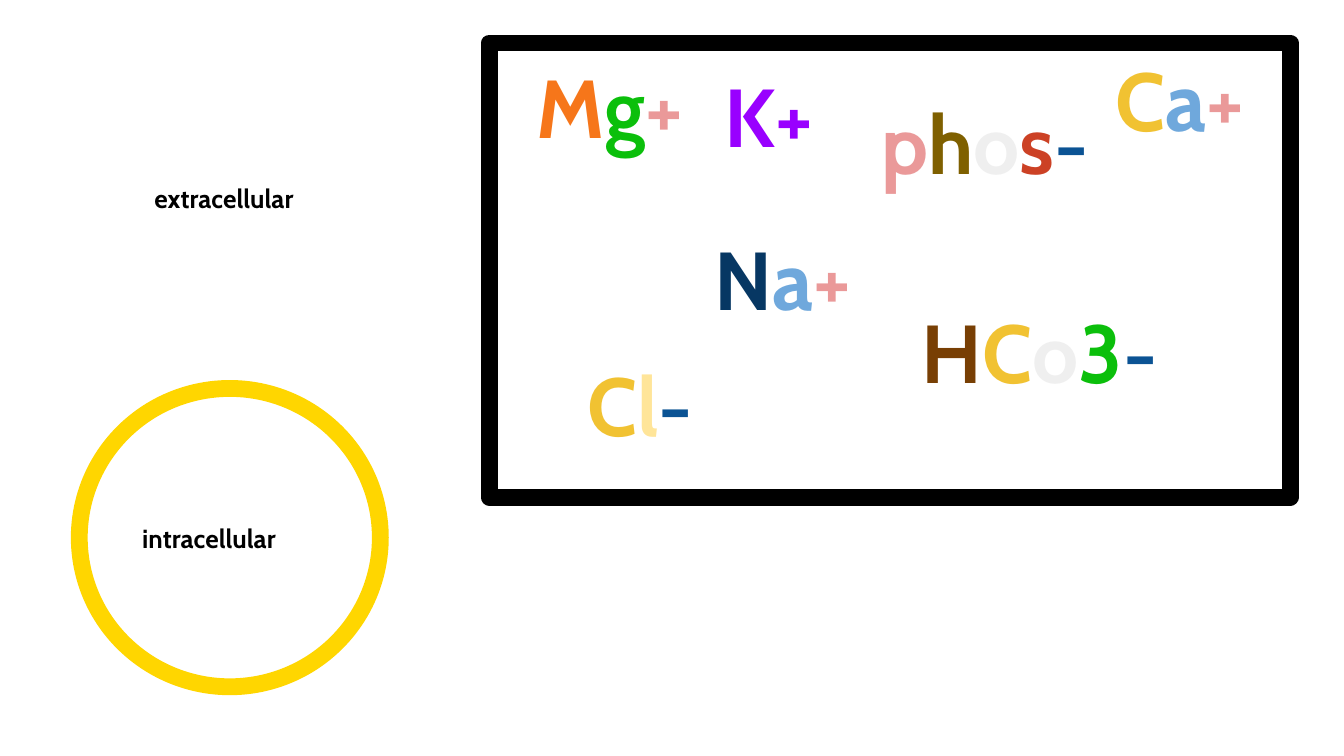
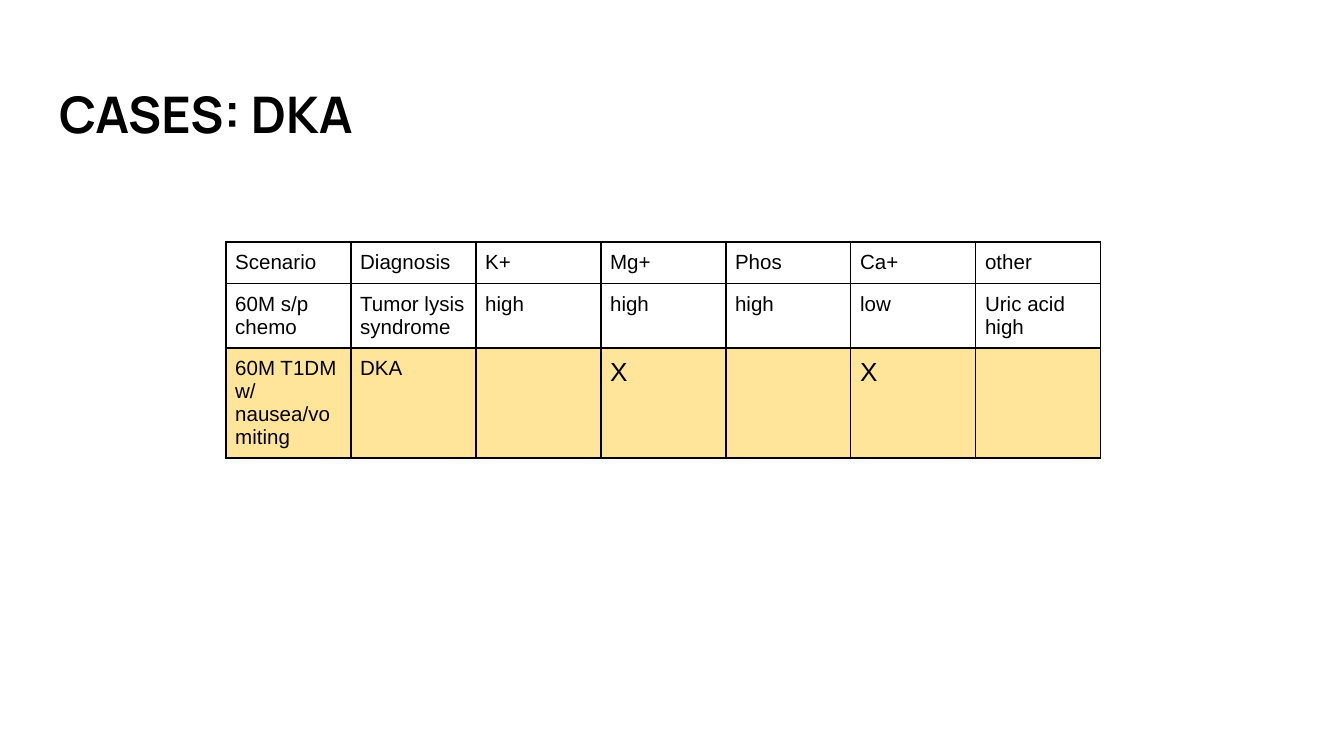
from lxml.etree import SubElement
from pptx import Presentation
from pptx.dml.color import RGBColor
from pptx.enum.shapes import MSO_SHAPE
from pptx.enum.text import MSO_ANCHOR, MSO_AUTO_SIZE, PP_ALIGN
from pptx.oxml.ns import qn
from pptx.util import Inches, Pt

COLORS = {"ink": "000000", "paper": "FFFFFF", "membrane": "FFD600", "highlight": "FFE599"}
PIECE_COLORS = {
    "K+": "9900FF", "p": "EA9999", "h": "7F6000", "o": "EFEFEF", "s": "CC4125",
    "N": "073763", "a": "6FA8DC", "C": "F1C232", "l": "FFE599", "M": "F6761A",
    "g": "0BBF0B", "H": "783F04", "3": "0BBF0B", "+": "EA9999", "-": "0B5394",
}
LABEL_FONT, TITLE_FONT, TABLE_FONT = "Cabin", "Manrope", "Arial"

# Coloured pieces, left, top, width
IONS = [
    (["K+"], 5.29, 0.39, 1.22),
    (["p", "h", "o", "s", "-"], 6.46, 0.59, 2.12),
    (["N", "a", "+"], 5.22, 1.6, 1.89),
    (["C", "l", "-"], 4.27, 2.54, 1.89),
    (["C", "a", "+"], 8.2, 0.27, 1.66),
    (["M", "g", "+"], 3.89, 0.32, 1.66),
    (["H", "C", "o", "3", "-"], 6.76, 2.14, 2.12),
]
COMPARTMENTS = [("intracellular", 0.96, 3.79), ("extracellular", 1.05, 1.26)]
CELL = (0.59, 2.89, 2.24, 2.22)
ION_FRAME = (3.64, 0.32, 5.96, 3.38)

CASES_TITLE = "CASES: DKA"
CASES = [
    ["Scenario", "Diagnosis", "K+", "Mg+", "Phos", "Ca+", "other"],
    ["60M s/p chemo", "Tumor lysis syndrome", "high", "high", "high", "low", "Uric acid high"],
    ["60M T1DM w/ nausea/vomiting", "DKA", "", "X", "", "X", ""],
]
CASE_COLUMN, CASE_ROWS = 0.93, [0.31, 0.48, 0.82]
CURRENT_CASE = 2


def rgb(color):
    return RGBColor.from_string(color)


def add_run(paragraph, words, size, font, color, bold=False):
    run = paragraph.add_run()
    run.text = words
    run.font.size, run.font.name, run.font.bold = Pt(size), font, bold
    run.font.color.rgb = rgb(color)


def set_margins(target, margin):
    target.margin_left = target.margin_right = Inches(margin)
    target.margin_top = target.margin_bottom = Inches(margin)


def add_label(slide, box, pieces, size):
    """Add a text box of (words, colour) pieces on one line."""
    frame = slide.shapes.add_textbox(*map(Inches, box)).text_frame
    frame.word_wrap = True
    frame.auto_size = MSO_AUTO_SIZE.SHAPE_TO_FIT_TEXT
    set_margins(frame, 0.1)
    for words, color in pieces:
        add_run(frame.paragraphs[0], words, size, LABEL_FONT, color, bold=True)


def add_outline(slide, kind, box, line, fill=None):
    shape = slide.shapes.add_shape(kind, *map(Inches, box))
    shape.shadow.inherit = False
    if fill:
        shape.fill.solid()
        shape.fill.fore_color.rgb = rgb(fill)
    else:
        shape.fill.background()
    shape.line.color.rgb = rgb(line)
    shape.line.width = Pt(9)


def border_cell(cell):
    properties = cell._tc.get_or_add_tcPr()
    for position, side in enumerate(("lnL", "lnR", "lnT", "lnB")):
        line = properties.makeelement(qn(f"a:{side}"), {"w": str(Pt(1))})
        properties.insert(position, line)
        solid = SubElement(line, qn("a:solidFill"))
        SubElement(solid, qn("a:srgbClr"), val=COLORS["ink"])


def build_ions(deck):
    slide = deck.slides.add_slide(deck.slide_layouts[6])
    add_outline(slide, MSO_SHAPE.OVAL, CELL, COLORS["membrane"], COLORS["paper"])
    for pieces, left, top, width in IONS:
        colored = [(piece, PIECE_COLORS[piece]) for piece in pieces]
        add_label(slide, (left, top, width, 0.94), colored, 44)
    add_outline(slide, MSO_SHAPE.RECTANGLE, ION_FRAME, COLORS["ink"])
    for name, left, top in COMPARTMENTS:
        add_label(slide, (left, top, 1.49, 0.44), [(name, COLORS["ink"])], 14)


def build_cases(deck):
    slide = deck.slides.add_slide(deck.slide_layouts[5])
    title = slide.shapes.title
    title.left, title.top, title.width, title.height = map(Inches, (0.34, 0.49, 4.03, 0.68))
    frame = title.text_frame
    set_margins(frame, 0.1)
    frame.vertical_anchor = MSO_ANCHOR.BOTTOM
    frame.paragraphs[0].alignment = PP_ALIGN.LEFT
    add_run(frame.paragraphs[0], CASES_TITLE, 27, TITLE_FONT, COLORS["ink"], bold=True)

    size = (CASE_COLUMN * len(CASES[0]), sum(CASE_ROWS))
    table = slide.shapes.add_table(len(CASES), len(CASES[0]),
                                   *map(Inches, (1.68, 1.8, *size))).table
    table.first_row = table.horz_banding = False
    for column in table.columns:
        column.width = Inches(CASE_COLUMN)
    for r, (case, height) in enumerate(zip(CASES, CASE_ROWS)):
        table.rows[r].height = Inches(height)
        for c, words in enumerate(case):
            cell = table.cell(r, c)
            set_margins(cell, 0.07)
            if r == CURRENT_CASE:
                cell.fill.solid()
                cell.fill.fore_color.rgb = rgb(COLORS["highlight"])
            else:
                cell.fill.background()
            border_cell(cell)
            if words:
                add_run(cell.text_frame.paragraphs[0], words,
                        14 if words == "X" else 11, TABLE_FONT, COLORS["ink"])


def main():
    deck = Presentation()
    deck.slide_width = Inches(10)
    deck.slide_height = deck.slide_width * 9 // 16
    build_ions(deck)
    build_cases(deck)
    deck.save("out.pptx")


if __name__ == "__main__":
    main()
